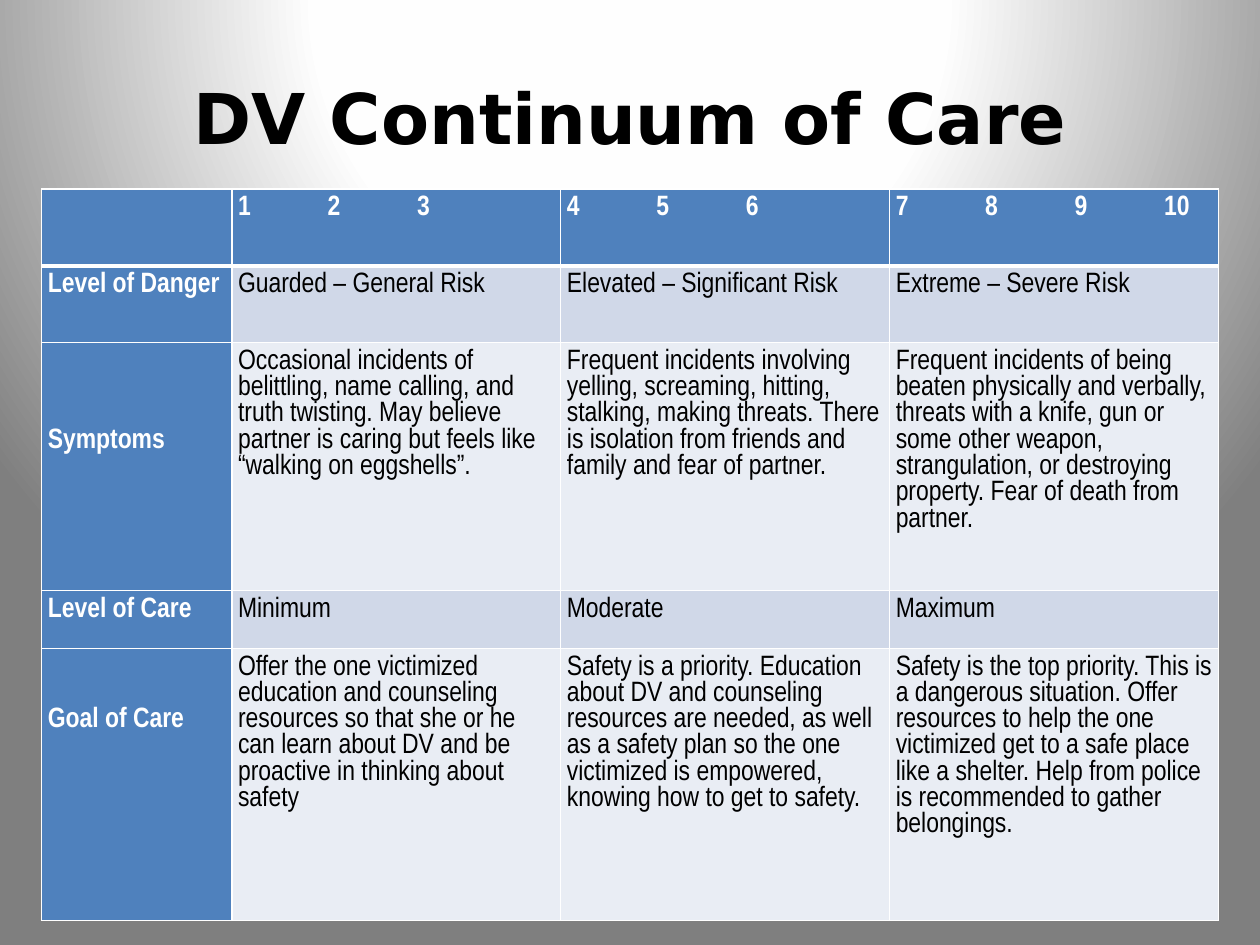
from lxml import etree
from pptx import Presentation
from pptx.dml.color import RGBColor
from pptx.enum.text import MSO_ANCHOR, PP_ALIGN
from pptx.oxml import parse_xml
from pptx.oxml.ns import qn
from pptx.util import Emu, Inches, Pt

CENTER = PP_ALIGN.CENTER
MIDDLE = MSO_ANCHOR.MIDDLE
BLANK_LAYOUT = 6

COLORS = {
    "heading": "4F81BD",
    "dark_band": "D0D8E8",
    "light_band": "E9EDF4",
    "white": "FFFFFF",
    "black": "000000",
}
BACKGROUND_STOPS = [(0, "FFFFFF"), (40, "FEFEFE"), (100, "7F7F7F")]
TITLE_FONT, TABLE_FONT = "DejaVu Sans", "Arial Narrow"

COLUMN_WIDTHS = [1.51, 2.61, 2.61, 2.61]
ROW_HEIGHTS = [0.61, 0.61, 1.9, 0.46, 2.16]
LABEL_LINES_DOWN = {2: 3, 4: 2}  # row: lines its label is set down by
CELL_MARGIN = 0.05
LINE_HEIGHT = 0.21
SCORE_STEP = 0.71

ROWS = [
    ["", "1\t2\t3", "4\t5\t6", "7\t8\t9\t10"],
    ["Level of Danger", "Guarded – General Risk", "Elevated – Significant Risk",
     "Extreme – Severe Risk"],
    ["Symptoms",
     "Occasional incidents of belittling, name calling, and truth twisting. "
     "May believe partner is caring but feels like “walking on eggshells”.",
     "Frequent incidents involving yelling, screaming, hitting, stalking, making "
     "threats. There is isolation from friends and family and fear of partner.",
     "Frequent incidents of being beaten physically and verbally, threats with a "
     "knife, gun or some other weapon, strangulation, or destroying property. "
     "Fear of death from partner."],
    ["Level of Care", "Minimum", "Moderate", "Maximum"],
    ["Goal of Care",
     "Offer the one victimized education and counseling resources so that she or "
     "he can learn about DV and be proactive in thinking about safety",
     "Safety is a priority. Education about DV and counseling resources are "
     "needed, as well as a safety plan so the one victimized is empowered, "
     "knowing how to get to safety.",
     "Safety is the top priority. This is a dangerous situation. Offer resources "
     "to help the one victimized get to a safe place like a shelter. Help from "
     "police is recommended to gather belongings."],
]


def set_background(slide):
    """Fill the slide with a radial gradient centred above its top edge."""
    fill = slide.background.fill
    fill.gradient()
    gradient = slide.background._cSld.find(".//" + qn("a:gradFill"))
    stops = "".join(
        f'<a:gs pos="{position * 1000}"><a:srgbClr val="{color}"/></a:gs>'
        for position, color in BACKGROUND_STOPS)
    gradient.getparent().replace(gradient, parse_xml(
        '<a:gradFill xmlns:a="http://schemas.openxmlformats.org/drawingml/2006/main"'
        f' rotWithShape="1"><a:gsLst>{stops}</a:gsLst><a:path path="circle">'
        '<a:fillToRect l="50000" t="-80000" r="50000" b="180000"/>'
        '</a:path></a:gradFill>'))


def format_text(paragraph, font_name, size, color, bold):
    for run in paragraph.runs:
        run.font.name = font_name
        run.font.size = Pt(size)
        run.font.bold = bold
        run.font.color.rgb = RGBColor.from_string(COLORS[color])


def add_title(slide, text, width, height):
    box = slide.shapes.add_textbox(
        Emu(int(width * 0.05)), Emu(int(height * 0.04)),
        Emu(int(width * 0.9)), Emu(int(height / 6)))
    frame = box.text_frame
    frame.word_wrap = True
    frame.vertical_anchor = MIDDLE
    frame.text = text
    frame.paragraphs[0].alignment = CENTER
    format_text(frame.paragraphs[0], TITLE_FONT, 40, "black", True)


def set_borders(cell, **widths):
    properties = cell._tc.get_or_add_tcPr()
    for side in "LRTB":
        line = etree.SubElement(properties, qn("a:ln" + side),
                                w=str(Pt(widths.get(side, 1))))
        solid = etree.SubElement(line, qn("a:solidFill"))
        etree.SubElement(solid, qn("a:srgbClr"), val=COLORS["white"])


def add_tab_stops(paragraph):
    tabs = etree.SubElement(paragraph._p.get_or_add_pPr(), qn("a:tabLst"))
    for step in range(1, 4):
        etree.SubElement(tabs, qn("a:tab"), pos=str(Inches(step * SCORE_STEP)), algn="l")


def fill_cell(cell, text, row, column):
    is_heading = row == 0 or column == 0
    band = "dark_band" if row % 2 else "light_band"
    set_borders(cell, T=3 if row == 1 else 1, B=3 if row == 0 else 1)
    cell.fill.solid()
    cell.fill.fore_color.rgb = RGBColor.from_string(
        COLORS["heading" if is_heading else band])
    cell.margin_left = cell.margin_right = cell.margin_bottom = Inches(CELL_MARGIN)
    lines_down = LABEL_LINES_DOWN.get(row, 0) if column == 0 else 0
    cell.margin_top = Inches(CELL_MARGIN + lines_down * LINE_HEIGHT)
    cell.text_frame.text = text
    paragraph = cell.text_frame.paragraphs[0]
    if "\t" in text:
        add_tab_stops(paragraph)
    format_text(paragraph, TABLE_FONT, 16,
                "white" if is_heading else "black", is_heading)


def add_care_table(slide):
    table = slide.shapes.add_table(
        len(ROW_HEIGHTS), len(COLUMN_WIDTHS), Inches(0.33), Inches(1.5),
        Inches(sum(COLUMN_WIDTHS)), Inches(sum(ROW_HEIGHTS))).table
    for column, width in zip(table.columns, COLUMN_WIDTHS):
        column.width = Inches(width)
    for row, height in zip(table.rows, ROW_HEIGHTS):
        row.height = Inches(height)
    for row, texts in enumerate(ROWS):
        for column, text in enumerate(texts):
            fill_cell(table.cell(row, column), text, row, column)


def main():
    presentation = Presentation()
    presentation.slide_width = Inches(10)
    presentation.slide_height = Inches(7.5)
    slide = presentation.slides.add_slide(presentation.slide_layouts[BLANK_LAYOUT])
    set_background(slide)
    add_title(slide, "DV Continuum of Care",
              presentation.slide_width, presentation.slide_height)
    add_care_table(slide)
    presentation.save("out.pptx")


if __name__ == "__main__":
    main()
